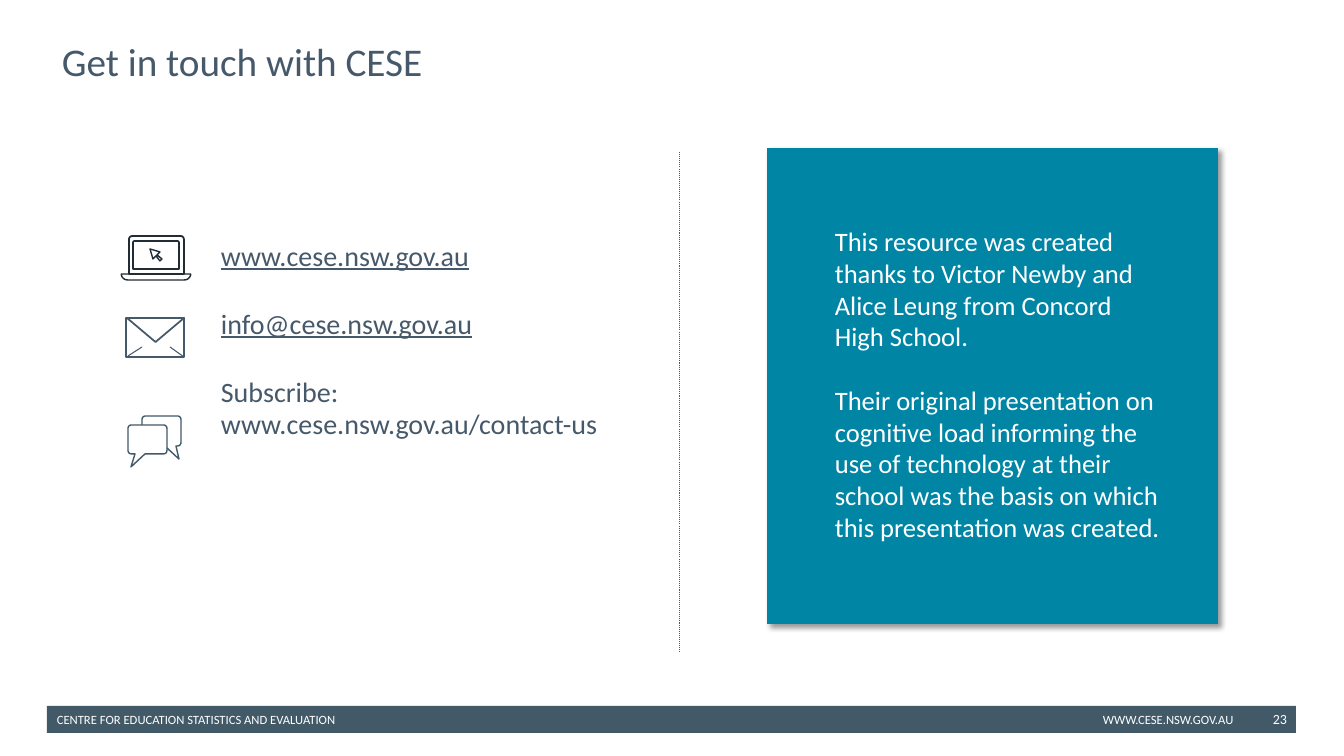
from lxml import etree
from pptx import Presentation
from pptx.dml.color import RGBColor
from pptx.enum.dml import MSO_LINE
from pptx.enum.shapes import MSO_CONNECTOR, MSO_SHAPE
from pptx.enum.text import MSO_ANCHOR, PP_ALIGN
from pptx.oxml.ns import qn
from pptx.util import Emu, Pt

RECTANGLE = MSO_SHAPE.RECTANGLE
TRIANGLE = MSO_SHAPE.ISOSCELES_TRIANGLE
PROCESS = MSO_SHAPE.FLOWCHART_PROCESS
STRAIGHT = MSO_CONNECTOR.STRAIGHT
DOTTED = MSO_LINE.ROUND_DOT
TOP, MIDDLE = MSO_ANCHOR.TOP, MSO_ANCHOR.MIDDLE
LEFT, RIGHT = PP_ALIGN.LEFT, PP_ALIGN.RIGHT

EMU_PER_PX = 914400 / 100.8
FONT = "Calibri"
COLORS = {"slate": "46596A", "footer": "425968", "ink": "212C34",
          "divider": "445769", "teal": "0085A4", "white": "FFFFFF"}

# Paragraphs are (text, underlined); boxes are left, top, width, height in px.
TITLE = [("Get in touch with CESE", False)]
CONTACTS = [("www.cese.nsw.gov.au", True),
            ("info@cese.nsw.gov.au", True),
            ("Subscribe: www.cese.nsw.gov.au/contact-us", False)]
CREDITS = [
    ("This resource was created thanks to Victor Newby and Alice Leung "
     "from Concord High School.", False),
    ("Their original presentation on cognitive load informing the use of "
     "technology at their school was the basis on which this presentation "
     "was created.", False)]
FOOTER_BAR = (47, 706, 1249, 27)
FOOTER_TEXTS = [
    ("CENTRE FOR EDUCATION STATISTICS AND EVALUATION", (47, 707, 466, 25), 9, LEFT),
    ("WWW.CESE.NSW.GOV.AU", (1093, 707, 229, 25), 9, LEFT),
    ("23", (1242, 699, 55, 40), 10, RIGHT)]
CREDIT_PANEL = (767, 148, 451, 476)
DIVIDER = (680, 152, 680, 652)
ENVELOPE = (126, 318, 58, 39)
ENVELOPE_FLAP = (127, 318, 57, 24)
ENVELOPE_FOLDS = [(128, 356, 142, 347), (170, 347, 184, 357)]

# Icon outlines: vertices as (x, y, corner radius), closed, colour, line width.
ICON_OUTLINES = [
    ([(129, 274, 0), (129, 236, 4), (184, 236, 4), (184, 274, 0)], True, "ink", 1.25),
    ([(133, 269, 0), (133, 241, 2), (179, 241, 2), (179, 269, 0)], True, "ink", 1.25),
    ([(121, 274, 1), (191, 274, 1), (189, 280, 5), (123, 280, 5)], True, "ink", 1),
    ([(150, 249, 0), (160, 252, 0), (157, 255, 0), (162, 259, 0),
      (160, 261, 0), (156, 256, 0), (153, 259, 0)], True, "ink", 1),
    ([(128, 425, 4), (167, 425, 4), (167, 454, 4), (145, 454, 0),
      (131, 467, 0), (135, 454, 0), (128, 454, 4)], True, "footer", 1),
    ([(142, 425, 0), (142, 416, 4), (181, 416, 4), (181, 446, 4),
      (176, 446, 0), (179, 459, 0), (167, 448, 0)], False, "footer", 1)]


def px(value):
    return Emu(round(value * EMU_PER_PX))


def rgb(name):
    return RGBColor.from_string(COLORS[name])


def set_line(item, color, width):
    item.line.color.rgb = rgb(color)
    item.line.width = Pt(width)


def add_block(slide, kind, box, fill=None, line=None):
    shape = slide.shapes.add_shape(kind, *map(px, box))
    shape.shadow.inherit = False
    if fill:
        shape.fill.solid()
        shape.fill.fore_color.rgb = rgb(fill)
    else:
        shape.fill.background()
    if line:
        set_line(shape, line, 1.25)
    else:
        shape.line.fill.background()
    return shape


def add_drop_shadow(shape):
    effects = shape._element.spPr.find(qn("a:effectLst"))
    shadow = etree.SubElement(effects, qn("a:outerShdw"), blurRad=str(Pt(4)),
                              dist=str(Pt(3)), dir="2700000", algn="tl", rotWithShape="0")
    color = etree.SubElement(shadow, qn("a:srgbClr"), val="000000")
    etree.SubElement(color, qn("a:alpha"), val="40000")


def add_line(slide, ends, color):
    line = slide.shapes.add_connector(STRAIGHT, *map(px, ends))
    set_line(line, color, 0.75)
    etree.SubElement(line._element.spPr, qn("a:effectLst"))
    return line


def add_text(slide, paragraphs, box, size, color, align=LEFT, anchor=TOP,
             pitch=None, gap=0):
    """Write paragraphs; pitch is the line height and gap the space between, in points."""
    frame = slide.shapes.add_textbox(*map(px, box)).text_frame
    frame.word_wrap = True
    frame.vertical_anchor = anchor
    for index, (text, underlined) in enumerate(paragraphs):
        paragraph = frame.add_paragraph() if index else frame.paragraphs[0]
        paragraph.alignment = align
        paragraph.space_before = Pt(gap if index else 0)
        if pitch:
            paragraph.line_spacing = Pt(pitch)
        run = paragraph.add_run()
        run.text = text
        run.font.name = FONT
        run.font.size = Pt(size)
        run.font.underline = underlined
        run.font.color.rgb = rgb(color)


def toward(start, end, distance):
    dx, dy = end[0] - start[0], end[1] - start[1]
    share = distance / (dx * dx + dy * dy) ** 0.5
    return start[0] + dx * share, start[1] + dy * share


def rounded_points(vertices, steps=6):
    """Replace each vertex that has a radius by points on a quadratic curve."""
    points = []
    for index, (x, y, radius) in enumerate(vertices):
        if not radius:
            points.append((x, y))
            continue
        first = toward((x, y), vertices[index - 1], radius)
        last = toward((x, y), vertices[(index + 1) % len(vertices)], radius)
        for step in range(steps + 1):
            t = step / steps
            points.append(tuple((1 - t) ** 2 * a + 2 * t * (1 - t) * b + t * t * c
                                for a, b, c in zip(first, (x, y), last)))
    return points


def add_outline(slide, vertices, closed, color, width):
    points = [(px(x), px(y)) for x, y in rounded_points(vertices)]
    builder = slide.shapes.build_freeform(*points[0])
    builder.add_line_segments(points[1:], close=closed)
    shape = builder.convert_to_shape()
    shape.shadow.inherit = False
    shape.fill.background()
    set_line(shape, color, width)


def main():
    presentation = Presentation()
    presentation.slide_width, presentation.slide_height = px(1344), px(756)
    slide = presentation.slides.add_slide(presentation.slide_layouts[6])

    add_block(slide, RECTANGLE, FOOTER_BAR, fill="footer")
    for text, box, size, align in FOOTER_TEXTS:
        add_text(slide, [(text, False)], box, size, "white", align, MIDDLE)

    add_text(slide, TITLE, (52, 30, 1210, 62), 28, "slate", anchor=MIDDLE)
    add_text(slide, CONTACTS, (211, 234, 492, 220), 20, "slate", pitch=23.5, gap=25)

    for outline in ICON_OUTLINES:
        add_outline(slide, *outline)
    add_block(slide, RECTANGLE, ENVELOPE, line="slate")
    add_block(slide, TRIANGLE, ENVELOPE_FLAP, line="slate").rotation = 180
    for fold in ENVELOPE_FOLDS:
        add_line(slide, fold, "slate")

    add_line(slide, DIVIDER, "divider").line.dash_style = DOTTED
    add_drop_shadow(add_block(slide, PROCESS, CREDIT_PANEL, fill="teal"))
    add_text(slide, CREDITS, (825, 220, 349, 333), 19, "white", pitch=22.7, gap=22.7)
    presentation.save("out.pptx")


if __name__ == "__main__":
    main()
